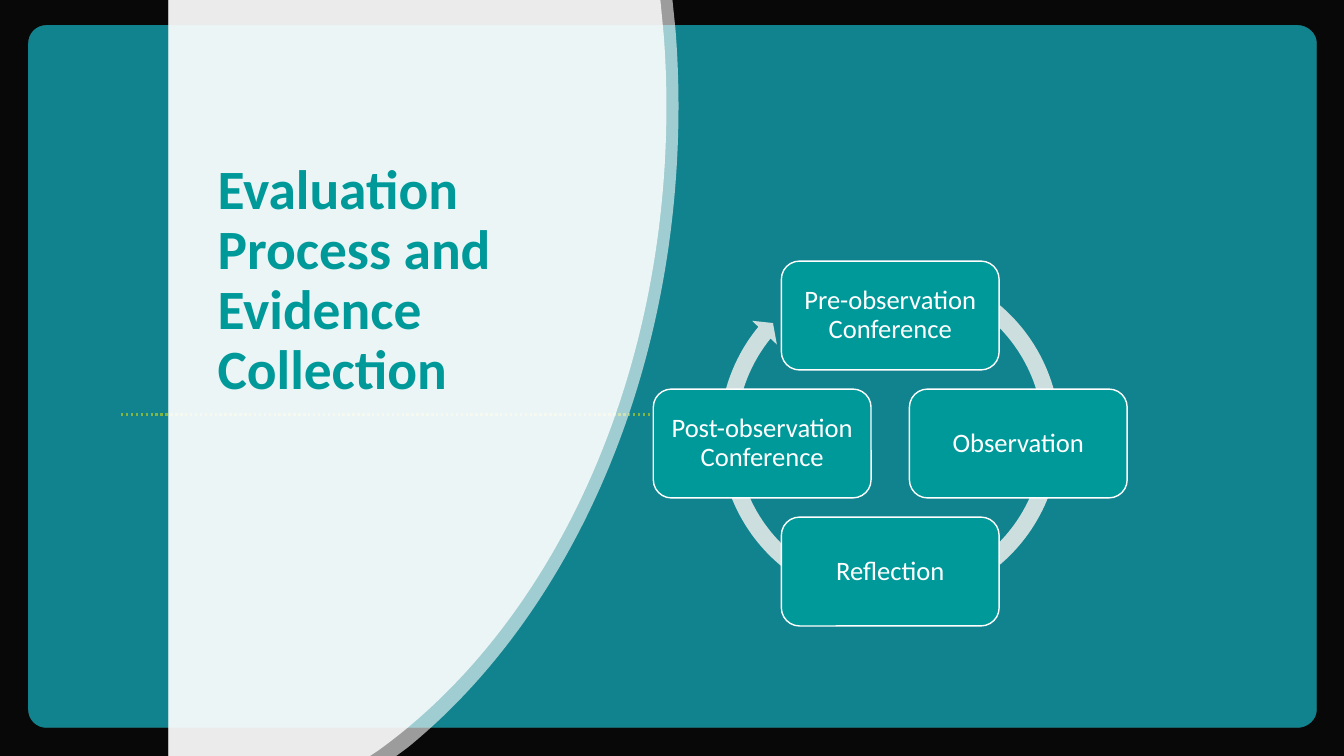
from lxml import etree
from pptx import Presentation
from pptx.dml.color import RGBColor
from pptx.enum.dml import MSO_LINE
from pptx.enum.shapes import MSO_CONNECTOR, MSO_SHAPE
from pptx.enum.text import MSO_ANCHOR, PP_ALIGN
from pptx.oxml.ns import qn

PX = 9144
PT = 12700
ROUND = MSO_SHAPE.ROUNDED_RECTANGLE
ARROW = MSO_SHAPE.CIRCULAR_ARROW
LINE = MSO_CONNECTOR.STRAIGHT
DOTS = MSO_LINE.ROUND_DOT
MID, BASE = MSO_ANCHOR.MIDDLE, MSO_ANCHOR.BOTTOM
LEFT, CENTER = PP_ALIGN.LEFT, PP_ALIGN.CENTER
TEAL, WHITE = "00999A", "FFFFFF"


def paint(shape, color, alpha=100, edge=None):
    shape.shadow.inherit = False
    shape.fill.solid()
    shape.fill.fore_color.rgb = RGBColor.from_string(color)
    if alpha < 100:
        tint = shape.fill._xPr.find(qn("a:solidFill"))[0]
        etree.SubElement(tint, qn("a:alpha")).set("val", str(alpha * 1000))
    if edge:
        shape.line.color.rgb = RGBColor.from_string(edge)
        shape.line.width = PT
    else:
        shape.line.fill.background()


def trace(shapes, loops):
    pen = shapes.build_freeform(*loops[0][0][0], scale=PX)
    for i, loop in enumerate(loops):
        if i:
            pen.move_to(*loop[0][0])
        pen.add_line_segments([p for part in loop[1:] for p in part], close=True)
    shape = pen.convert_to_shape()
    lines = iter(list(shape._element.iter(qn("a:lnTo"))))
    for part in [part for loop in loops for part in loop[1:]]:
        first, *rest = [next(lines) for _ in part]
        if rest:
            first.tag = qn("a:cubicBezTo")
            for line in rest:
                first.append(line[0])
                line.getparent().remove(line)
    return shape


deck = Presentation()
deck.slide_width, deck.slide_height = 1333 * PX, 750 * PX
slide = deck.slides.add_slide(deck.slide_layouts[6])
slide.background.fill.solid()
slide.background.fill.fore_color.rgb = RGBColor.from_string("454545")
shapes = slide.shapes

rim = [[(0, 0)], [(1333, 0)], [(1333, 750)], [(0, 750)]]
hole = [[(46, 25)],
        [(36, 25), (28, 33), (28, 43)], [(28, 704)],
        [(28, 714), (36, 722), (46, 722)], [(1287, 722)],
        [(1297, 722), (1306, 714), (1306, 704)], [(1306, 43)],
        [(1306, 33), (1297, 25), (1287, 25)]]
paint(trace(shapes, [rim, hole]), "000000", 87)
paint(trace(shapes, [hole]), "0099A7", 75)

rule = shapes.add_connector(LINE, 120 * PX, 411 * PX, 667 * PX, 411 * PX)
rule.line.color.rgb = RGBColor.from_string("83B641")
rule.line.width = int(1.75 * PT)
rule.line.dash_style = DOTS
etree.SubElement(rule._element.spPr, qn("a:effectLst"))

SWEEPS = (
    (60, [(667, 0)], [(670, 29)],
     [(672, 54), (673, 80), (673, 105)],
     [(673, 375), (565, 611), (404, 742)], [(393, 750)]),
    (80, [(655, 0)], [(658, 31)],
     [(660, 55), (661, 80), (661, 105)],
     [(661, 381), (546, 621), (376, 744)], [(367, 750)]),
)
for alpha, *curve in SWEEPS:
    paint(trace(shapes, [[[(167, 0)], *curve, [(167, 750)]]]), WHITE, alpha)

ring = shapes.add_shape(ARROW, 705 * PX, 254 * PX, 355 * PX, 355 * PX)
for i, value in enumerate((0.047, 2.729, 131.541, 178.149, 0.048)):
    ring.adjustments[i] = value
paint(ring, "CCDEDE")

labels = [("Evaluation Process and Evidence Collection",
           (206, 96, 440, 307), 39.6, True, TEAL, LEFT, BASE, (10, 5))]
STAGES = (("Pre-observation Conference", 0, -1), ("Observation", 1, 0),
          ("Reflection", 0, 1), ("Post-observation Conference", -1, 0))
for text, col, row in STAGES:
    x, y = 775 + 127 * col, 386 + 127 * row
    node = shapes.add_shape(ROUND, x * PX, y * PX, 216 * PX, 108 * PX)
    paint(node, TEAL, edge=WHITE)
    labels.append((text, (x + 5, y + 5, 206, 98), 19, False, WHITE,
                   CENTER, MID, (8, 8)))

for text, area, size, bold, color, align, anchor, (side, end) in labels:
    box = shapes.add_textbox(*(n * PX for n in area))
    frame = box.text_frame
    style = {"word_wrap": True, "vertical_anchor": anchor,
             "margin_left": side * PX, "margin_right": side * PX,
             "margin_top": end * PX, "margin_bottom": end * PX}
    for name, value in style.items():
        setattr(frame, name, value)
    para = frame.paragraphs[0]
    para.alignment = align
    para.line_spacing = 0.9
    run = para.add_run()
    run.text = text
    look = {"name": "Calibri", "size": int(size * PT), "bold": bold}
    for name, value in look.items():
        setattr(run.font, name, value)
    run.font.color.rgb = RGBColor.from_string(color)

deck.save("out.pptx")
